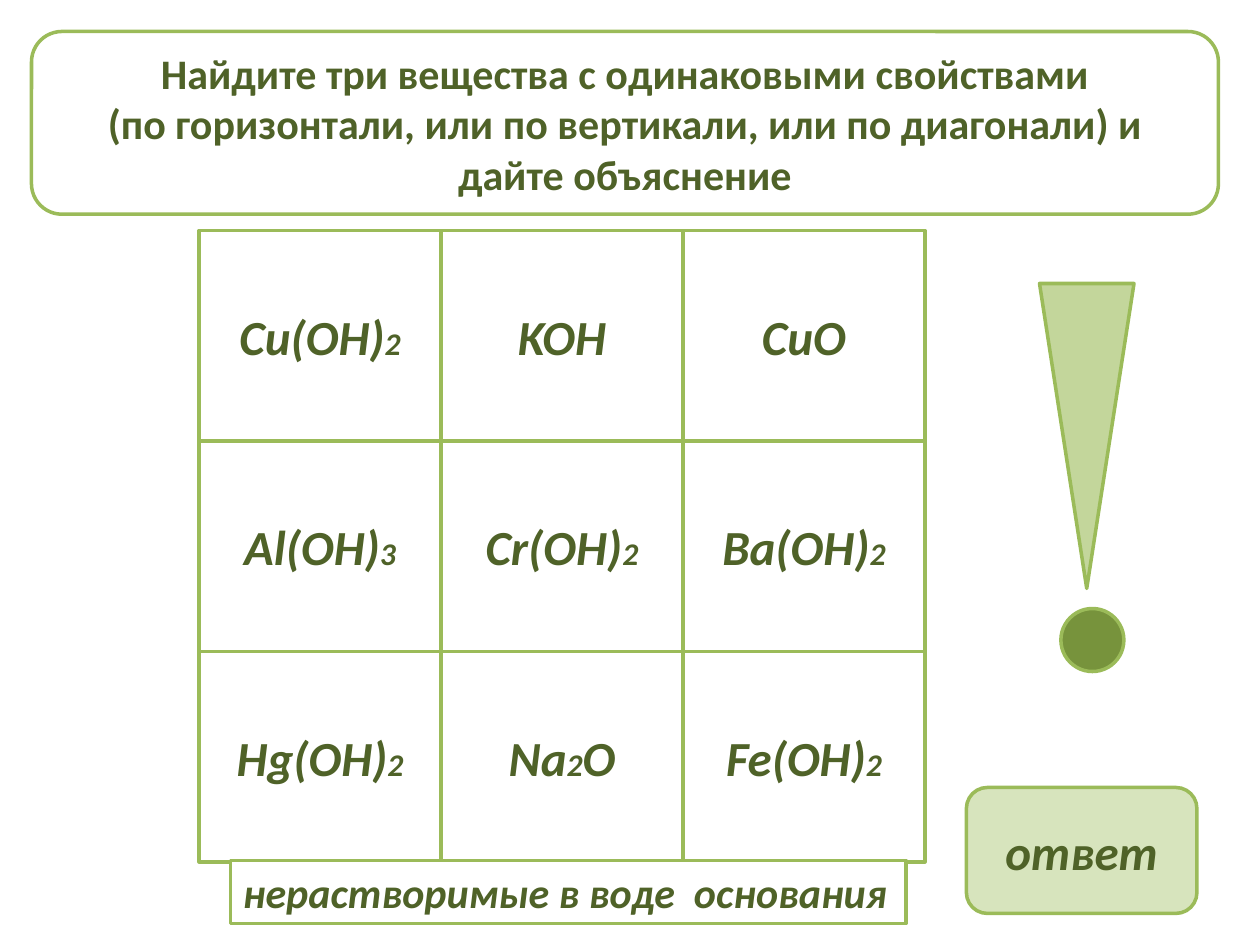
from itertools import groupby

from pptx import Presentation
from pptx.dml.color import RGBColor
from pptx.enum.shapes import MSO_SHAPE
from pptx.enum.text import MSO_ANCHOR, PP_ALIGN
from pptx.util import Inches, Pt

TITLE = [
    "Найдите три вещества с одинаковыми свойствами",
    "(по горизонтали, или по вертикали, или по диагонали) и дайте объяснение",
]
FORMULAS = [
    ["Cu(OH)2", "KOH", "CuO"],
    ["Al(OH)3", "Cr(OH)2", "Ba(OH)2"],
    ["Hg(OH)2", "Na2O", "Fe(OH)2"],
]
ANSWER = "ответ"
EXPLANATION = "нерастворимые в воде  основания"

WHITE, GREEN, DARK_GREEN = "FFFFFF", "9BBB59", "4F6228"
GRID_LEFT, GRID_TOP = 1.58, 1.83
CELL_WIDTH, CELL_HEIGHT = 1.92, 1.67
TEXT_SIZE, INDEX_SIZE = 28, 18


def color(value):
    return RGBColor.from_string(value)


def add_figure(slide, kind, left, top, width, height, fill=WHITE):
    shape = slide.shapes.add_shape(
        kind, Inches(left), Inches(top), Inches(width), Inches(height))
    shape.shadow.inherit = False
    shape.fill.solid()
    shape.fill.fore_color.rgb = color(fill)
    shape.line.color.rgb = color(GREEN)
    shape.line.width = Pt(2)
    return shape


def add_run(paragraph, text, size, italic=True):
    run = paragraph.add_run()
    run.text = text
    font = run.font
    font.name, font.size = "Calibri", Pt(size)
    font.bold, font.italic = True, italic
    font.color.rgb = color(DARK_GREEN)


def first_paragraph(shape, alignment=PP_ALIGN.CENTER, anchor=MSO_ANCHOR.MIDDLE):
    shape.text_frame.vertical_anchor = anchor
    paragraph = shape.text_frame.paragraphs[0]
    paragraph.alignment = alignment
    return paragraph


def add_title(slide):
    title = add_figure(slide, MSO_SHAPE.ROUNDED_RECTANGLE, 0.25, 0.25, 9.42, 1.45)
    paragraph = first_paragraph(title)
    add_run(paragraph, TITLE[0], 24, italic=False)
    for line in TITLE[1:]:
        paragraph = title.text_frame.add_paragraph()
        paragraph.alignment = PP_ALIGN.CENTER
        add_run(paragraph, line, 24, italic=False)


def add_formula_grid(slide):
    for row, formulas in enumerate(FORMULAS):
        for column, formula in enumerate(formulas):
            cell = add_figure(
                slide, MSO_SHAPE.RECTANGLE,
                GRID_LEFT + column * CELL_WIDTH, GRID_TOP + row * CELL_HEIGHT,
                CELL_WIDTH, CELL_HEIGHT)
            paragraph = first_paragraph(cell)
            for is_index, characters in groupby(formula, str.isdigit):
                add_run(paragraph, "".join(characters),
                        INDEX_SIZE if is_index else TEXT_SIZE)


def add_exclamation_mark(slide):
    add_figure(slide, MSO_SHAPE.FLOWCHART_MERGE, 8.25, 2.25, 0.75, 2.42, "C3D69B")
    add_figure(slide, MSO_SHAPE.FLOWCHART_CONNECTOR, 8.42, 4.83, 0.5, 0.5, "77933C")


def add_answer(slide):
    button = add_figure(
        slide, MSO_SHAPE.ROUNDED_RECTANGLE, 7.67, 6.25, 1.83, 1, "D7E4BD")
    add_run(first_paragraph(button), ANSWER, TEXT_SIZE)
    explanation = add_figure(slide, MSO_SHAPE.RECTANGLE, 1.83, 6.83, 5.36, 0.5)
    explanation.text_frame.word_wrap = False
    add_run(first_paragraph(explanation, PP_ALIGN.LEFT, MSO_ANCHOR.TOP),
            EXPLANATION, 24)


def main():
    presentation = Presentation()
    presentation.slide_width, presentation.slide_height = Inches(10), Inches(7.5)
    slide = presentation.slides.add_slide(presentation.slide_layouts[6])
    add_title(slide)
    add_formula_grid(slide)
    add_exclamation_mark(slide)
    add_answer(slide)
    presentation.save("out.pptx")


if __name__ == "__main__":
    main()
